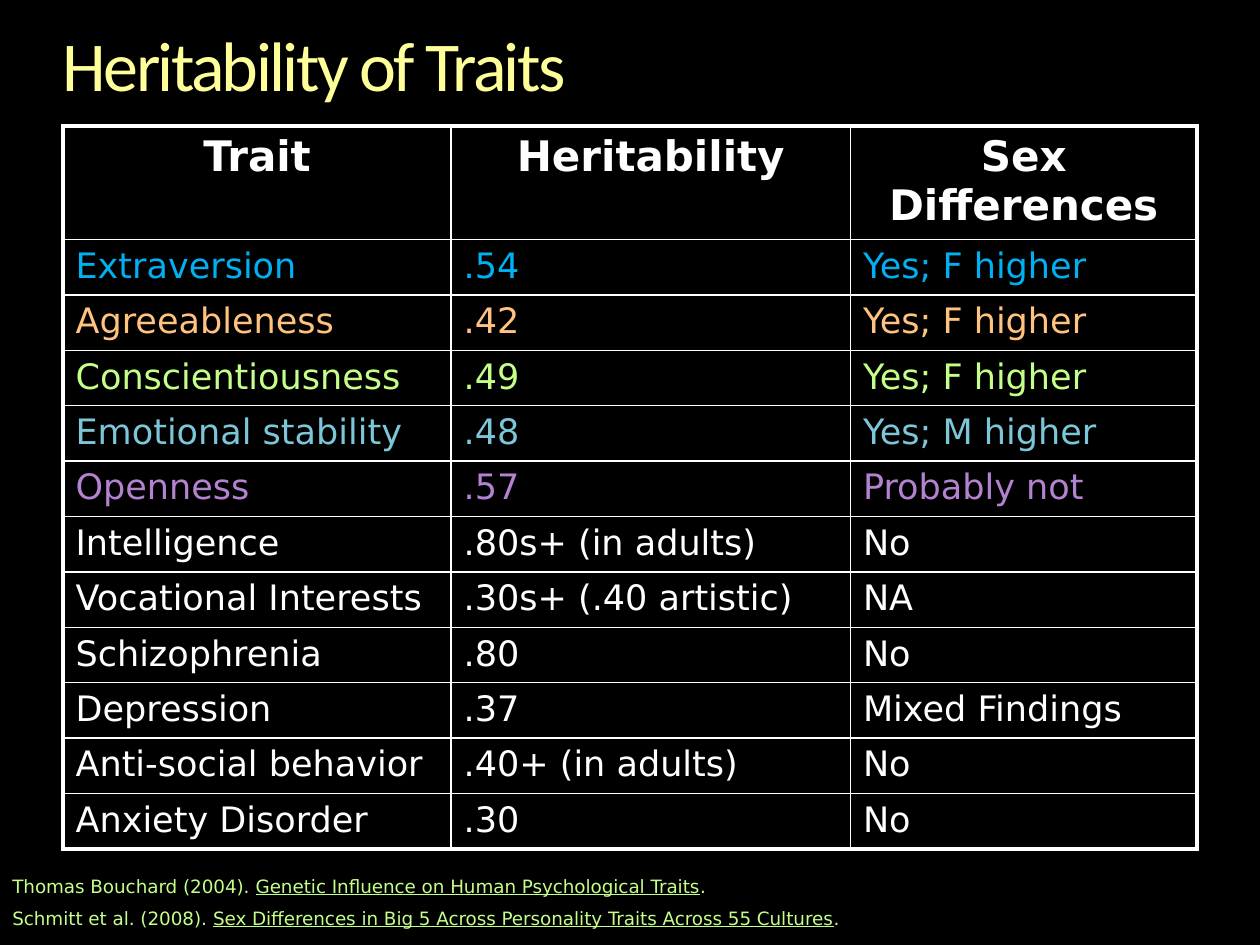
from typing import NamedTuple

from lxml.etree import SubElement
from pptx import Presentation
from pptx.dml.color import RGBColor
from pptx.enum.text import PP_ALIGN
from pptx.oxml.ns import qn
from pptx.util import Inches, Pt

HUES = {
    "black": "000000", "white": "FFFFFF", "yellow": "FFFF99",
    "blue": "00B0F0", "peach": "FFC27F", "lime": "C4FF89",
    "teal": "7CC6D8", "violet": "B382D0",
}
WIDE, HIGH = 10, 7.5
COLS = (3.08, 3.17, 2.75)
HEAD, BODY = 0.87, 0.44
THICK, THIN = 2.25, 1
SANS = "DejaVu Sans"


class Trait(NamedTuple):
    name: str
    rate: str
    sex: str
    hue: str = "white"


class Source(NamedTuple):
    author: str
    title: str


TITLES = ("Trait", "Heritability", "Sex Differences")
TRAITS = (
    Trait("Extraversion", ".54", "Yes; F higher", "blue"),
    Trait("Agreeableness", ".42", "Yes; F higher", "peach"),
    Trait("Conscientiousness", ".49", "Yes; F higher", "lime"),
    Trait("Emotional stability", ".48", "Yes; M higher", "teal"),
    Trait("Openness", ".57", "Probably not", "violet"),
    Trait("Intelligence", ".80s+ (in adults)", "No"),
    Trait("Vocational Interests", ".30s+ (.40 artistic)", "NA"),
    Trait("Schizophrenia", ".80", "No"),
    Trait("Depression", ".37", "Mixed Findings"),
    Trait("Anti-social behavior", ".40+ (in adults)", "No"),
    Trait("Anxiety Disorder", ".30", "No"),
)
SOURCES = (
    Source("Thomas Bouchard (2004). ",
           "Genetic Influence on Human Psychological Traits"),
    Source("Schmitt et al. (2008). ",
           "Sex Differences in Big 5 Across Personality Traits Across 55 Cultures"),
)


def style(para, size: float, hue: str, face: str = SANS, bold: bool = False) -> None:
    font = para.font
    font.name, font.size, font.bold = face, Pt(size), bold
    font.color.rgb = RGBColor.from_string(HUES[hue])


def add_box(slide, left: float, top: float, wide: float, high: float):
    """Add a wrapping text box, placed by shares of the slide."""
    box = slide.shapes.add_textbox(
        Inches(left * WIDE), Inches(top * HIGH),
        Inches(wide * WIDE), Inches(high * HIGH))
    box.text_frame.word_wrap = True
    return box.text_frame


def add_edge(cell, side: str, width: float) -> None:
    line = SubElement(cell._tc.get_or_add_tcPr(), qn(f"a:ln{side}"),
                      w=str(Pt(width)))
    fill = SubElement(line, qn("a:solidFill"))
    SubElement(fill, qn("a:srgbClr"), val=HUES["white"])


def draw_title(slide) -> None:
    frame = add_box(slide, 0.05, 1 / 30, 0.9, 1 / 15)
    frame.margin_left = frame.margin_right = 0
    frame.margin_top = frame.margin_bottom = 0
    para = frame.paragraphs[0]
    para.line_spacing = 0.9
    run = para.add_run()
    run.text = "Heritability of Traits"
    run._r.get_or_add_rPr().set("spc", "-150")
    style(para, 40, "yellow", "Calibri")


def draw_table(slide) -> None:
    rows = (Trait(*TITLES), *TRAITS)
    highs = [HEAD] + [BODY] * len(TRAITS)
    table = slide.shapes.add_table(
        len(rows), len(COLS), Inches(0.5), Inches(1),
        Inches(sum(COLS)), Inches(sum(highs))).table
    table.first_row = table.horz_banding = False
    for col, wide in zip(table.columns, COLS):
        col.width = Inches(wide)
    for r, (row, high) in enumerate(zip(rows, highs)):
        table.rows[r].height = Inches(high)
        for c, text in enumerate(row[:len(COLS)]):
            cell = table.cell(r, c)
            # Thick outer frame, thin inner rules
            outer = {"L": c == 0, "R": c == len(COLS) - 1,
                     "T": r == 0, "B": r == len(rows) - 1}
            for side, edge in outer.items():
                add_edge(cell, side, THICK if edge else THIN)
            cell.fill.background()
            cell.text = text
            para = cell.text_frame.paragraphs[0]
            para.alignment = PP_ALIGN.CENTER if r == 0 else PP_ALIGN.LEFT
            style(para, 24 if r == 0 else 20, row.hue, bold=r == 0)


def draw_sources(slide) -> None:
    frame = add_box(slide, 0, 0.92, 0.75, 0.07)
    for i, source in enumerate(SOURCES):
        para = frame.add_paragraph() if i else frame.paragraphs[0]
        if i:
            para.space_before = Pt(5.25)
        for text in (source.author, source.title, "."):
            run = para.add_run()
            run.text = text
            run.font.underline = text == source.title
        style(para, 10.5, "lime")


def main() -> None:
    deck = Presentation()
    deck.slide_width, deck.slide_height = Inches(WIDE), Inches(HIGH)
    slide = deck.slides.add_slide(deck.slide_layouts[6])
    back = slide.background.fill
    back.solid()
    back.fore_color.rgb = RGBColor.from_string(HUES["black"])
    draw_title(slide)
    draw_table(slide)
    draw_sources(slide)
    deck.save("out.pptx")


if __name__ == "__main__":
    main()
